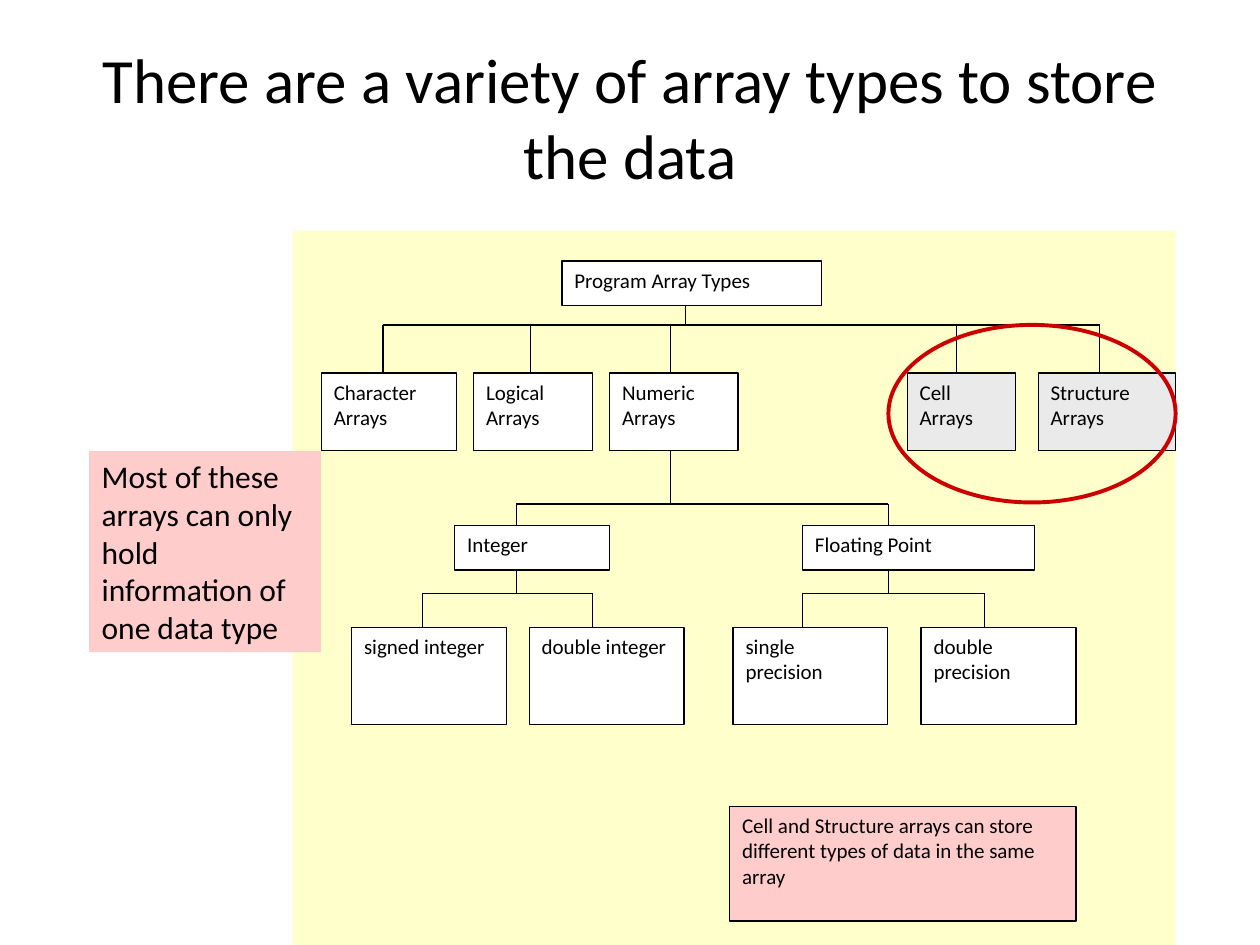
from lxml import etree
from pptx import Presentation
from pptx.dml.color import RGBColor
from pptx.enum.shapes import MSO_CONNECTOR, MSO_SHAPE
from pptx.enum.text import MSO_ANCHOR, PP_ALIGN
from pptx.oxml.ns import qn
from pptx.util import Cm, Pt

RECT, OVAL = MSO_SHAPE.RECTANGLE, MSO_SHAPE.OVAL
STRAIGHT = MSO_CONNECTOR.STRAIGHT
TOP, MIDDLE = MSO_ANCHOR.TOP, MSO_ANCHOR.MIDDLE
LEFT, CENTER = PP_ALIGN.LEFT, PP_ALIGN.CENTER
BLACK, WHITE, GREY, PINK = "000000", "FFFFFF", "EAEAEA", "FFCCCC"
YELLOW, RED = "FFFFCC", "CC0000"

ROOT_H, ROW_TOP, ROW_H = 0.9, 2.87, 1.57
ROOT_BUS, NUMERIC_BUS = 1.9, 5.51
NUMERIC_STEM = 7.61
LEAF_W, LEAF_H = 3.12, 1.96

# label, left, width, stem, fill
ARRAY_TYPES = [
    ("Character Arrays", 0.58, 2.72, 1.82, WHITE),
    ("Logical Arrays", 3.65, 2.39, 4.79, WHITE),
    ("Numeric Arrays", 6.39, 2.59, NUMERIC_STEM, WHITE),
    ("Cell Arrays", 12.39, 2.18, 13.38, GREY),
    ("Structure Arrays", 15.03, 2.77, 16.27, GREY),
]
# label, left, width, stem, leaves as (label, left, stem)
NUMERIC_TYPES = [
    ("Integer", 3.27, 3.12, 4.51,
     [("signed integer", 1.19, 2.61), ("double integer", 4.77, 6.04)]),
    ("Floating Point", 10.28, 4.67, 12.01,
     [("single precision", 8.88, 10.28), ("double precision", 12.67, 13.94)]),
]


def rgb(color):
    """Turn a hex string into a colour."""
    return RGBColor.from_string(color)


def set_text(shape, text, size, align=LEFT, anchor=TOP):
    """Write one paragraph of black Calibri into a shape."""
    tf = shape.text_frame
    tf.text = text
    tf.word_wrap = True
    tf.vertical_anchor = anchor
    p = tf.paragraphs[0]
    p.alignment = align
    font = p.runs[0].font
    font.name, font.size = "Calibri", Pt(size)
    font.color.rgb = rgb(BLACK)


def add_box(s, x, y, w, h, fill=None, line=None, text="", size=12, kind=RECT, weight=0.75):
    """Add a preset shape, optionally filled, outlined and labelled."""
    sp = s.shapes.add_shape(kind, Cm(x), Cm(y), Cm(w), Cm(h))
    sp.shadow.inherit = False
    if fill:
        sp.fill.solid()
        sp.fill.fore_color.rgb = rgb(fill)
    else:
        sp.fill.background()
    if line:
        sp.line.color.rgb = rgb(line)
        sp.line.width = Pt(weight)
    else:
        sp.line.fill.background()
    if text:
        set_text(sp, text, size)


def add_line(s, x1, y1, x2, y2):
    """Add a thin black line."""
    c = s.shapes.add_connector(STRAIGHT, Cm(x1), Cm(y1), Cm(x2), Cm(y2))
    c.line.color.rgb = rgb(BLACK)
    c.line.width = Pt(0.75)
    etree.SubElement(c._element.spPr, qn("a:effectLst"))


def add_fork(s, stem, top, bus, bottom, drops):
    """Join a parent's stem to its children through a horizontal bus."""
    add_line(s, stem, top, stem, bus)
    add_line(s, drops[0], bus, drops[-1], bus)
    for x in drops:
        add_line(s, x, bus, x, bottom)


def add_title(s, x, y, w, h):
    """Place and format the title."""
    title = s.shapes.title
    title.left, title.top, title.width, title.height = Cm(x), Cm(y), Cm(w), Cm(h)
    set_text(title, "There are a variety of array types to store the data",
             36, CENTER, MIDDLE)


def add_branch(s, x, y, label, left, width, stem, leaves):
    """Draw one numeric type with its leaves below."""
    bus, leaf_top = y + 1.37, y + 2.06
    add_box(s, x + left, y, width, ROOT_H, WHITE, BLACK, label)
    for text, leaf_left, _ in leaves:
        add_box(s, x + leaf_left, leaf_top, LEAF_W, LEAF_H, WHITE, BLACK, text)
    add_fork(s, x + stem, y + ROOT_H, bus, leaf_top, [x + leaf[2] for leaf in leaves])


def add_tree(s, x, y, w, h):
    """Draw the panel with the tree of array types."""
    row, branch_top = y + ROW_TOP, y + 5.94
    add_box(s, x, y, w, h, YELLOW)
    add_box(s, x + 5.43, y + 0.61, 5.23, ROOT_H, WHITE, BLACK, "Program Array Types")
    for label, left, width, _, fill in ARRAY_TYPES:
        add_box(s, x + left, row, width, ROW_H, fill, BLACK, label)
    add_fork(s, x + 7.92, y + 0.61 + ROOT_H, y + ROOT_BUS, row,
             [x + item[3] for item in ARRAY_TYPES])
    add_fork(s, x + NUMERIC_STEM, row + ROW_H, y + NUMERIC_BUS, branch_top,
             [x + item[3] for item in NUMERIC_TYPES])
    for item in NUMERIC_TYPES:
        add_branch(s, x, branch_top, *item)
    add_box(s, x + 8.81, y + 11.61, 6.98, 2.31, PINK, BLACK,
            "Cell and Structure arrays can store different types of data in the same array")
    add_box(s, x + 12.01, y + ROOT_BUS, 5.79, 3.58, line=RED, kind=OVAL, weight=2.25)


def add_side_note(s, x, y, w, h):
    """Draw the remark beside the tree."""
    add_box(s, x, y, w, h, PINK, size=18,
            text="Most of these arrays can only hold information of one data type")


def main():
    """Build and save the slide."""
    prs = Presentation()
    prs.slide_width, prs.slide_height = Cm(25.4), Cm(19.05)
    s = prs.slides.add_slide(prs.slide_layouts[5])
    add_title(s, 1.27, 0.76, 22.86, 3.18)
    add_tree(s, 5.9, 4.65, 17.8, 14.4)
    add_side_note(s, 1.8, 9.09, 4.67, 4.06)
    prs.save("out.pptx")


if __name__ == "__main__":
    main()
